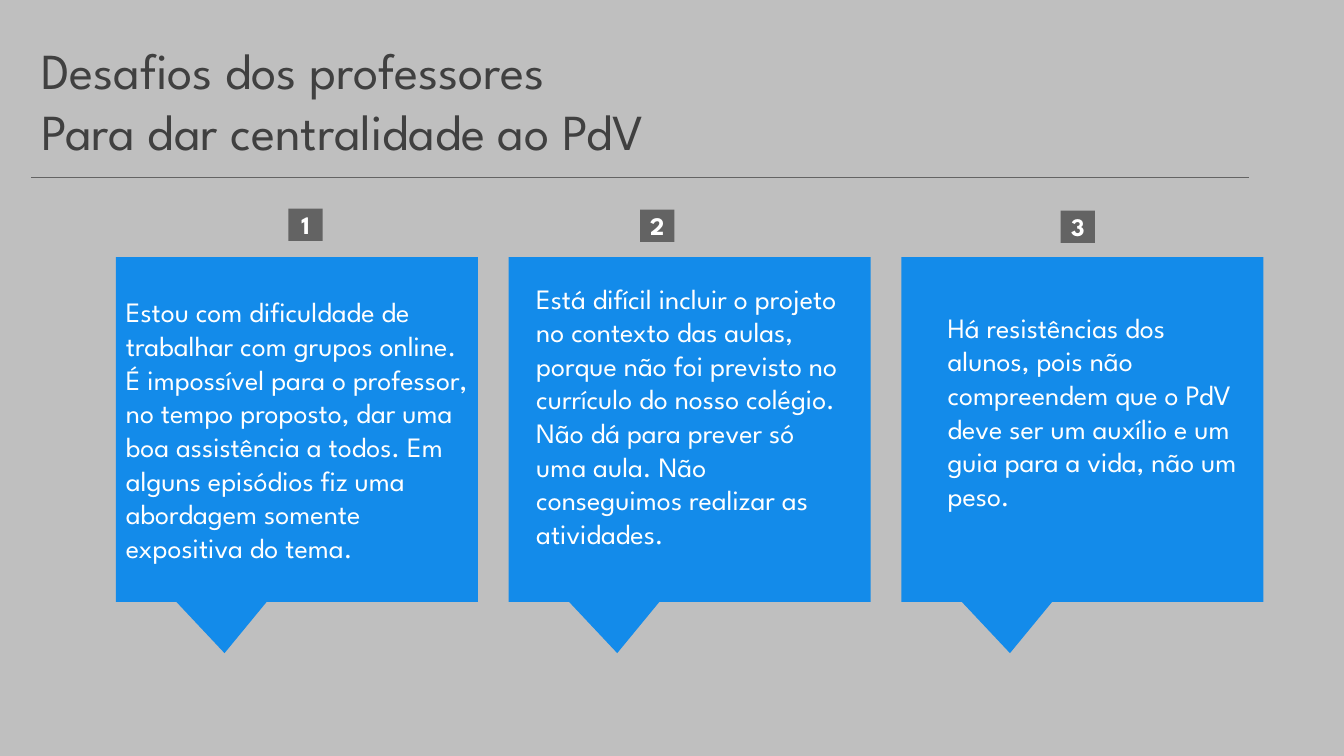
from dataclasses import dataclass
from typing import Optional

from lxml import etree
from pptx import Presentation
from pptx import util as u
from pptx.dml.color import RGBColor
from pptx.enum import shapes, text
from pptx.oxml import ns

FONT = "League Spartan"
BLUE, GRAY, DARK, WHITE = "138BEA", "636363", "404040", "FFFFFF"
CARD_LEFT, CARD_TOP, CARD_STEP = 1.15, 2.55, 3.895
CARD_WIDTH, CARD_HEIGHT = 3.59, 3.42
BADGE_WIDTH, BADGE_HEIGHT = 0.34, 0.32


@dataclass
class Area:
    left: float
    top: float
    width: float
    height: float

    def lengths(self) -> list:
        return [u.Inches(v) for v in (self.left, self.top, self.width, self.height)]


@dataclass
class Challenge:
    message: str
    badge_left: float
    badge_top: float
    text_area: Optional[Area] = None  # None puts the text inside the callout


CHALLENGES = [
    Challenge(
        "Estou com dificuldade de trabalhar com grupos online. É impossível para o "
        "professor, no tempo proposto, dar uma boa assistência a todos. Em alguns "
        "episódios fiz uma abordagem somente expositiva do tema.",
        2.86, 2.07),
    Challenge(
        "Está difícil incluir o projeto no contexto das aulas, porque não foi previsto "
        "no currículo do nosso colégio. Não dá para prever só uma aula. Não conseguimos "
        "realizar as atividades.",
        6.35, 2.08, Area(5.22, 2.74, 3.28, 3.13)),
    Challenge(
        "Há resistências dos alunos, pois não compreendem que o PdV deve ser um auxílio "
        "e um guia para a vida, não um peso.",
        10.52, 2.09, Area(9.3, 3.03, 3.11, 2.46)),
]


def color(value: str) -> RGBColor:
    return RGBColor.from_string(value)


def write(box, lines: list[str], size: float, ink: str, bold: bool = False,
          align=text.PP_ALIGN.LEFT, anchor=text.MSO_ANCHOR.TOP) -> None:
    frame = box.text_frame
    frame.word_wrap = True
    frame.vertical_anchor = anchor
    for index, line in enumerate(lines):
        para = frame.add_paragraph() if index else frame.paragraphs[0]
        para.text = line
        para.alignment = align
        para.font.name = FONT
        para.font.size = u.Pt(size)
        para.font.bold = bold
        para.font.color.rgb = color(ink)


def add_block(page, kind, area: Area, fill: str):
    block = page.shapes.add_shape(kind, *area.lengths())
    block.shadow.inherit = False
    block.fill.solid()
    block.fill.fore_color.rgb = color(fill)
    block.line.fill.background()
    return block


def add_title(page) -> None:
    box = page.shapes.add_textbox(*Area(0.31, 0.34, 12.9, 1.31).lengths())
    write(box, ["Desafios dos professores", "Para dar centralidade ao PdV"], 36, DARK)
    rule = page.shapes.add_connector(
        shapes.MSO_CONNECTOR.STRAIGHT,
        u.Inches(0.31), u.Inches(1.76), u.Inches(12.39), u.Inches(1.76))
    rule.line.color.rgb = color(GRAY)
    rule.line.width = u.Pt(0.75)
    etree.SubElement(rule.element.spPr, ns.qn("a:effectLst"))


def add_challenge(page, index: int, challenge: Challenge) -> None:
    # Callout
    area = Area(CARD_LEFT + index * CARD_STEP, CARD_TOP, CARD_WIDTH, CARD_HEIGHT)
    callout = add_block(page, shapes.MSO_SHAPE.RECTANGULAR_CALLOUT, area, BLUE)
    callout.adjustments[0] = -0.2
    callout.adjustments[1] = 0.649

    # Message
    if challenge.text_area:
        box = page.shapes.add_textbox(*challenge.text_area.lengths())
        write(box, [challenge.message], 20, WHITE)
    else:
        write(callout, [challenge.message], 20, WHITE, anchor=text.MSO_ANCHOR.MIDDLE)

    # Number badge
    area = Area(challenge.badge_left, challenge.badge_top, BADGE_WIDTH, BADGE_HEIGHT)
    badge = add_block(page, shapes.MSO_SHAPE.RECTANGLE, area, GRAY)
    write(badge, [str(index + 1)], 18, WHITE, bold=True,
          align=text.PP_ALIGN.CENTER, anchor=text.MSO_ANCHOR.MIDDLE)


def main() -> None:
    deck = Presentation()
    deck.slide_width, deck.slide_height = u.Inches(13.33), u.Inches(7.5)
    page = deck.slides.add_slide(deck.slide_layouts[6])
    page.background.fill.solid()
    page.background.fill.fore_color.rgb = color("BFBFBF")
    add_title(page)
    for index, challenge in enumerate(CHALLENGES):
        add_challenge(page, index, challenge)
    deck.save("out.pptx")


if __name__ == "__main__":
    main()
